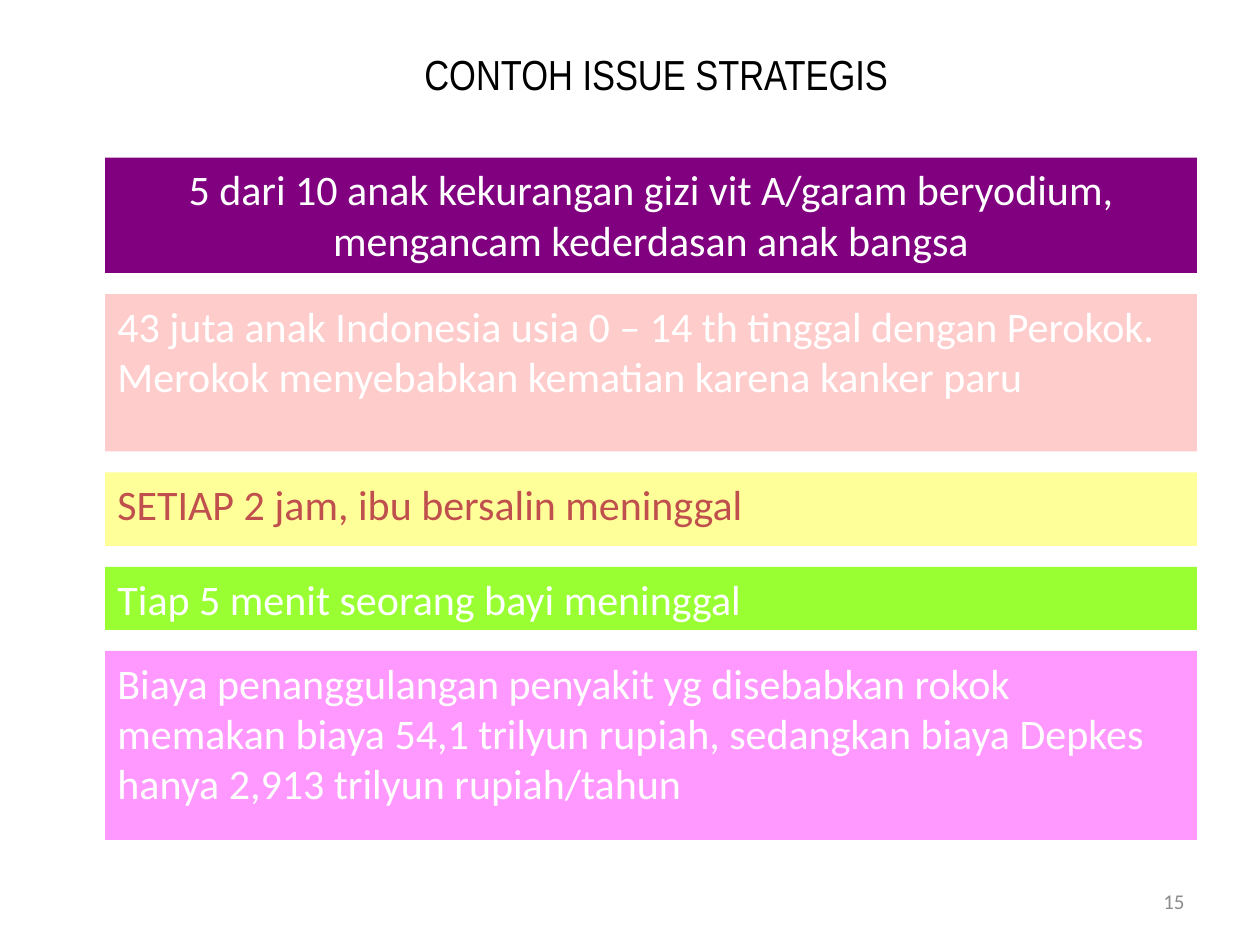
"""Build the slide of strategic issue examples as a stack of coloured bars."""
from dataclasses import dataclass

from pptx import Presentation
from pptx.dml.color import RGBColor
from pptx.enum.shapes import MSO_SHAPE
from pptx.enum.text import MSO_ANCHOR, MSO_AUTO_SIZE, PP_ALIGN
from pptx.util import Pt

RECTANGLE = MSO_SHAPE.RECTANGLE
TOP, MIDDLE = MSO_ANCHOR.TOP, MSO_ANCHOR.MIDDLE
LEFT, CENTER, RIGHT = PP_ALIGN.LEFT, PP_ALIGN.CENTER, PP_ALIGN.RIGHT
NO_AUTOFIT = MSO_AUTO_SIZE.NONE


@dataclass(frozen=True)
class Theme:
    title_font: str = "Arial Narrow"
    body_font: str = "Calibri"
    text_size: int = 24
    number_size: int = 12
    black: str = "000000"
    white: str = "FFFFFF"
    gray: str = "8C8C8C"
    red: str = "C0504D"
    purple: str = "800080"
    rose: str = "FFCCCC"
    yellow: str = "FFFF99"
    green: str = "99FF33"
    pink: str = "FF99FF"


theme = Theme()


def place(shape, left, top, width, height):
    shape.left, shape.top = Pt(left), Pt(top)
    shape.width, shape.height = Pt(width), Pt(height)


def write(shape, text, font, size, color, alignment, anchor=TOP):
    frame = shape.text_frame
    frame.word_wrap = True
    frame.auto_size = NO_AUTOFIT
    frame.vertical_anchor = anchor
    paragraph = frame.paragraphs[0]
    paragraph.text = text
    paragraph.alignment = alignment
    paragraph.font.name = font
    paragraph.font.size = Pt(size)
    paragraph.font.color.rgb = RGBColor.from_string(color)


presentation = Presentation()
presentation.slide_width, presentation.slide_height = Pt(720), Pt(540)
slide = presentation.slides.add_slide(presentation.slide_layouts[0])
title, subtitle = slide.placeholders

place(title, 168, 24, 414, 30)
write(title, "CONTOH ISSUE STRATEGIS", theme.title_font, theme.text_size, theme.black, CENTER)

issues = [
    ("5 dari 10 anak kekurangan gizi vit A/garam beryodium, mengancam kederdasan anak bangsa",
     66, theme.purple, theme.white),
    ("43 juta anak Indonesia usia 0 – 14 th tinggal dengan Perokok. "
     "Merokok menyebabkan kematian karena kanker paru",
     90, theme.rose, theme.white),
    ("SETIAP 2 jam, ibu bersalin meninggal", 42, theme.yellow, theme.red),
    ("Tiap 5 menit seorang bayi meninggal", 36, theme.green, theme.white),
    ("Biaya penanggulangan penyakit yg disebabkan rokok memakan biaya 54,1 trilyun rupiah, "
     "sedangkan biaya Depkes hanya 2,913 trilyun rupiah/tahun",
     108, theme.pink, theme.white),
]
bar_left, bar_width, bar_gap = 60, 624, 12
bar_top = 90
for index, (text, height, fill, color) in enumerate(issues):
    if index == 0:
        bar, alignment = subtitle, CENTER
    else:
        bar, alignment = slide.shapes.add_shape(RECTANGLE, 0, 0, 0, 0), LEFT
        bar.shadow.inherit = False
    place(bar, bar_left, bar_top, bar_width, height)
    bar.fill.solid()
    bar.fill.fore_color.rgb = RGBColor.from_string(fill)
    bar.line.fill.background()
    write(bar, text, theme.body_font, theme.text_size, color, alignment)
    bar_top += height + bar_gap

number = slide.shapes.add_textbox(Pt(516), Pt(500.5), Pt(168), Pt(28.75))
write(number, "15", theme.body_font, theme.number_size, theme.gray, RIGHT, MIDDLE)

presentation.save("out.pptx")
